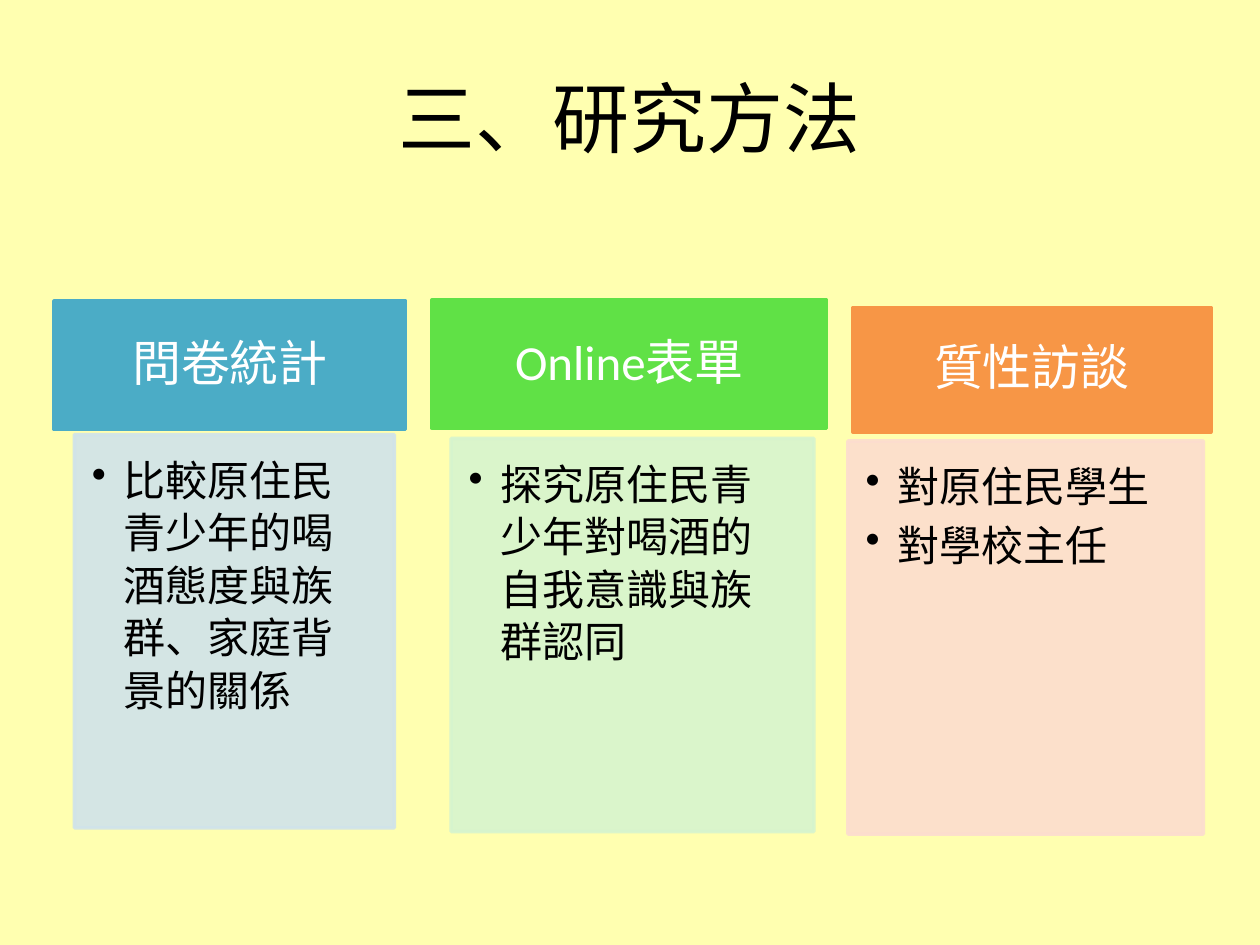
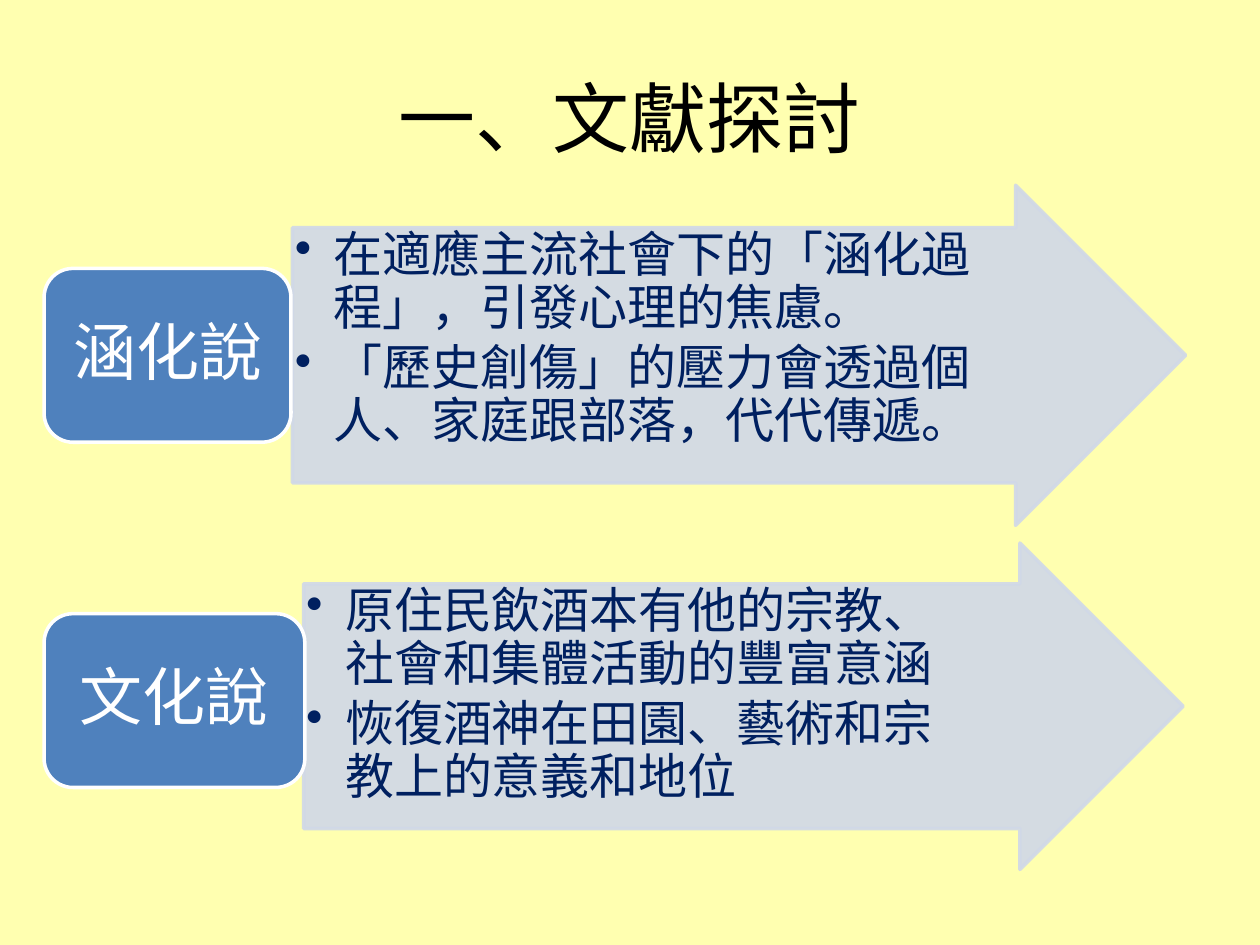
import collections

import pptx
import pptx.dml.color
import pptx.enum.shapes
import pptx.enum.text
import pptx.oxml
import pptx.oxml.ns
import pptx.util

PX = 9144  # EMU per px, 100 px to the inch
RGB = pptx.dml.color.RGBColor
SHAPES = pptx.enum.shapes.MSO_SHAPE
ALIGN = pptx.enum.text.PP_ALIGN
ANCHOR = pptx.enum.text.MSO_ANCHOR
Box = collections.namedtuple("Box", "left top width height")

CREAM = RGB(0xFF, 0xFF, 0xB0)
BLACK = RGB(0x00, 0x00, 0x00)
WHITE = RGB(0xFF, 0xFF, 0xFF)
NAVY = RGB(0x00, 0x20, 0x60)
BLUE = RGB(0x4F, 0x81, 0xBD)
PALE_BLUE = RGB(0xD0, 0xD8, 0xE8)
TEAL = RGB(0x4B, 0xAC, 0xC6)
PALE_TEAL = RGB(0xD0, 0xE3, 0xEA)
GREEN = RGB(0x60, 0xE1, 0x46)
PALE_GREEN = RGB(0xD6, 0xF4, 0xCE)
ORANGE = RGB(0xF7, 0x96, 0x46)
PALE_ORANGE = RGB(0xFC, 0xDD, 0xCF)

BODY_FONT = "Calibri"
ARROW_FONT = "Noto Sans CJK SC"
TITLE_BOX = Box(50, 30, 900, 125)

# Header box, panel box, header colour, panel colour, heading, points
METHODS = [
    (Box(43, 239, 279, 102), Box(59, 345, 254, 312), TEAL, PALE_TEAL,
     "問卷統計", ["比較原住民青少年的喝酒態度與族群、家庭背景的關係"]),
    (Box(343, 238, 313, 102), Box(358, 348, 288, 312), GREEN, PALE_GREEN,
     "Online表單", ["探究原住民青少年對喝酒的自我意識與族群認同"]),
    (Box(677, 244, 284, 99), Box(673, 350, 282, 312), ORANGE, PALE_ORANGE,
     "質性訪談", ["對原住民學生", "對學校主任"]),
]

# Label box, arrow box, label, points
THEORIES = [
    (Box(35, 213, 196, 138), Box(232, 147, 709, 270), "涵化說",
     ["在適應主流社會下的「涵化過程」，引發心理的焦慮。",
      "「歷史創傷」的壓力會透過個人、家庭跟部落，代代傳遞。"]),
    (Box(35, 487, 207, 138), Box(241, 431, 698, 259), "文化說",
     ["原住民飲酒本有他的宗教、社會和集體活動的豐富意涵",
      "恢復酒神在田園、藝術和宗教上的意義和地位"]),
]


def place(shape, box):
    shape.left, shape.top, shape.width, shape.height = (n * PX for n in box)


def style_span(span, size, color, font):
    span.font.size = pptx.util.Pt(size)
    span.font.color.rgb = color
    span.font.name = font


def add_block(page, kind, box, fill, line, opacity=100):
    block = page.shapes.add_shape(kind, *(n * PX for n in box))
    block.shadow.inherit = False
    block.fill.solid()
    block.fill.fore_color.rgb = fill
    block.line.color.rgb = line
    block.line.width = pptx.util.Pt(2)
    if opacity < 100:
        for color in block._element.spPr.iter(pptx.oxml.ns.qn("a:srgbClr")):
            color.append(pptx.oxml.parse_xml(
                f'<a:alpha {pptx.oxml.ns.nsdecls("a")} val="{opacity * 1000}"/>'))
    return block


def set_insets(frame, left, top, right, bottom):
    frame.margin_left, frame.margin_top = left * PX, top * PX
    frame.margin_right, frame.margin_bottom = right * PX, bottom * PX
    frame.word_wrap = True


def write_label(block, text, size, insets):
    frame = block.text_frame
    set_insets(frame, *insets)
    frame.vertical_anchor = ANCHOR.MIDDLE
    frame.text = text
    para = frame.paragraphs[0]
    para.alignment = ALIGN.CENTER
    para.line_spacing = 0.9
    style_span(para.runs[0], size, WHITE, BODY_FONT)


def write_points(block, points, size, color, font, insets, indent, spacing):
    frame = block.text_frame
    set_insets(frame, *insets)
    frame.vertical_anchor = ANCHOR.TOP
    frame.text = "\n".join(points)
    for para in frame.paragraphs:
        para.alignment = ALIGN.LEFT
        para.line_spacing = spacing
        para.space_after = pptx.util.Pt(0.15 * size)
        style_span(para.runs[0], size, color, font)
        # Hanging bullet
        props = para._p.get_or_add_pPr()
        props.set("marL", str(indent * PX))
        props.set("indent", str(-indent * PX))
        props.append(pptx.oxml.parse_xml(
            f'<a:buChar {pptx.oxml.ns.nsdecls("a")} char="•"/>'))


def add_page(deck, title):
    page = deck.slides.add_slide(deck.slide_layouts[5])
    place(page.shapes.title, TITLE_BOX)
    frame = page.shapes.title.text_frame
    frame.text = title
    frame.vertical_anchor = ANCHOR.MIDDLE
    frame.paragraphs[0].alignment = ALIGN.CENTER
    style_span(frame.paragraphs[0].runs[0], 44, BLACK, BODY_FONT)
    return page


def add_method(page, header_box, panel_box, color, pale, heading, points):
    header = add_block(page, SHAPES.RECTANGLE, header_box, color, color)
    write_label(header, heading, 28, (22, 12, 22, 12))
    panel = add_block(page, SHAPES.RECTANGLE, panel_box, pale, pale, 90)
    write_points(panel, points, 24, BLACK, BODY_FONT, (14, 14, 19, 21),
                 25, pptx.util.Pt(30))


def add_theory(page, label_box, arrow_box, name, points):
    arrow = add_block(page, SHAPES.RIGHT_ARROW, arrow_box, PALE_BLUE, PALE_BLUE, 90)
    arrow.adjustments[0], arrow.adjustments[1] = 0.75, 0.5
    # Keep the text clear of the arrow's point
    right = 2 + arrow_box.height // 4
    write_points(arrow, points, 28, NAVY, ARROW_FONT, (2, 2, right, 2), 31, 0.9)
    label = add_block(page, SHAPES.ROUNDED_RECTANGLE, label_box, BLUE, WHITE)
    write_label(label, name, 36, (15, 7, 15, 7))


def main():
    deck = pptx.Presentation()
    deck.slide_width, deck.slide_height = 1000 * PX, 750 * PX
    # Shared background
    background = deck.slide_master.background.fill
    background.solid()
    background.fore_color.rgb = CREAM

    methods_page = add_page(deck, "三、研究方法")
    for method in METHODS:
        add_method(methods_page, *method)

    theories_page = add_page(deck, "一、文獻探討")
    for theory in THEORIES:
        add_theory(theories_page, *theory)

    deck.save("out.pptx")


if __name__ == "__main__":
    main()
